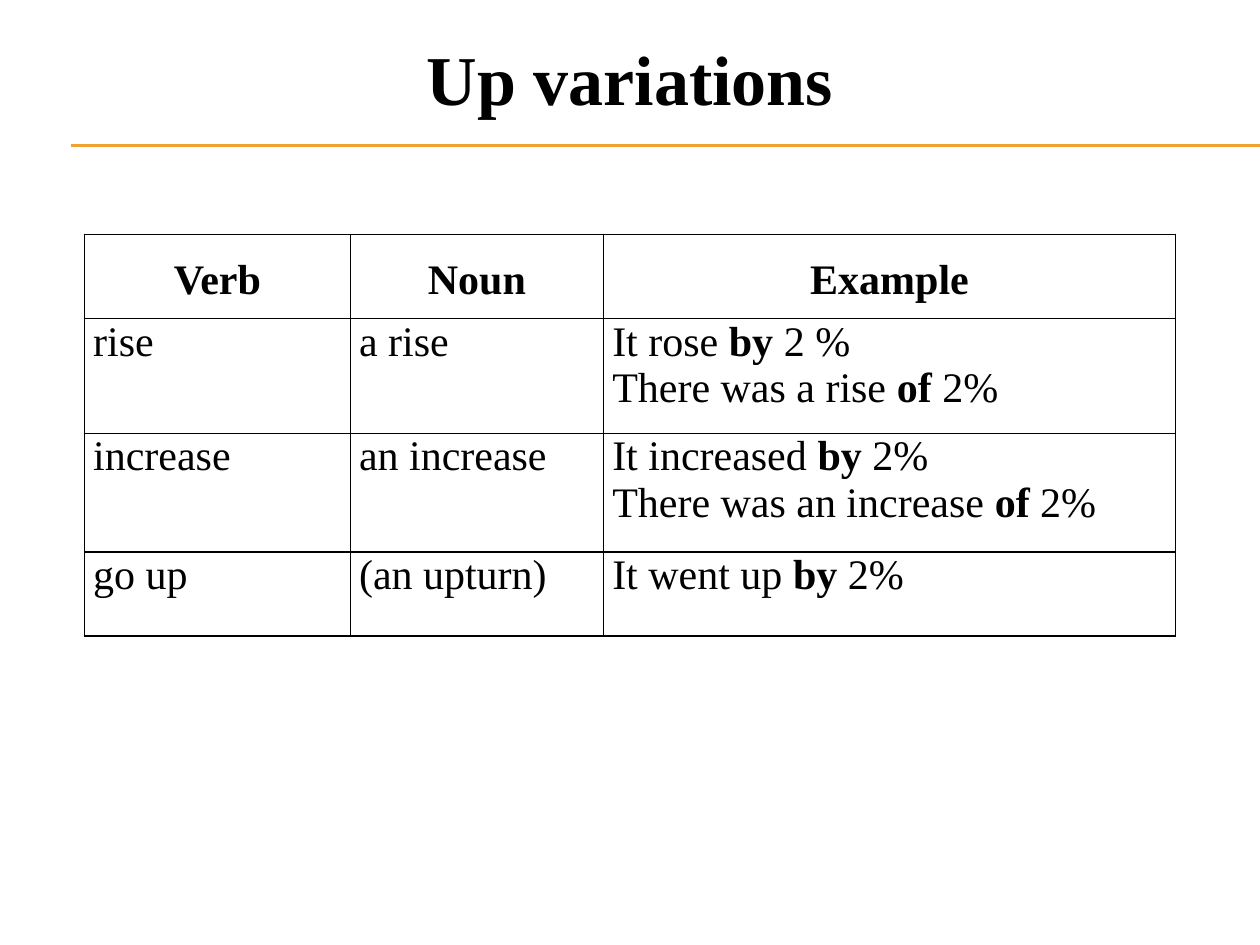
from lxml import etree
from pptx import Presentation
from pptx.dml.color import RGBColor
from pptx.enum.shapes import MSO_CONNECTOR
from pptx.enum.text import MSO_ANCHOR, PP_ALIGN
from pptx.oxml.ns import qn
from pptx.util import Pt

STRAIGHT = MSO_CONNECTOR.STRAIGHT
TOP, MIDDLE = MSO_ANCHOR.TOP, MSO_ANCHOR.MIDDLE
LEFT, CENTER = PP_ALIGN.LEFT, PP_ALIGN.CENTER
FONT = "Times New Roman"
BLACK, WHITE, AMBER = "000000", "FFFFFF", "F0A22E"
SLIDE_WIDTH, SLIDE_HEIGHT = 720, 540

COLUMN_SHARES = [2.11, 2.01, 4.54]
ROW_SHARES = [0.67, 0.91, 0.94, 0.67]
VARIATIONS = [
    ["Verb", "Noun", "Example"],
    ["rise", "a rise", "It rose *by *2 %\nThere was a rise *of* 2%"],
    ["increase", "an increase",
     "It increased *by* 2%\nThere was an increase *of* 2%"],
    ["go up", "(an upturn)", "It went up *by* 2%"],
]


def color(value):
    return RGBColor.from_string(value)


def style_paragraph(paragraph, size, align):
    paragraph.alignment = align
    paragraph.font.name = FONT
    paragraph.font.size = Pt(size)
    paragraph.font.color.rgb = color(BLACK)


def add_heading(slide, text, left, top, width, height):
    heading = slide.shapes.title
    heading.left, heading.top = Pt(left), Pt(top)
    heading.width, heading.height = Pt(width), Pt(height)
    frame = heading.text_frame
    frame.text = text
    frame.vertical_anchor = MIDDLE
    style_paragraph(frame.paragraphs[0], 40, CENTER)
    frame.paragraphs[0].font.bold = True


def add_double_rule(slide, left, top, width, gap):
    for y in (top, top + gap):
        rule = slide.shapes.add_connector(
            STRAIGHT, Pt(left), Pt(y), Pt(left + width), Pt(y))
        rule.line.color.rgb = color(AMBER)
        rule.line.width = Pt(0.75)
        etree.SubElement(rule._element.spPr, qn("a:effectLst"))


def add_borders(cell):
    properties = cell._tc.get_or_add_tcPr()
    for side in ("lnL", "lnR", "lnT", "lnB"):
        border = etree.SubElement(properties, qn(f"a:{side}"), w=str(Pt(1)))
        fill = etree.SubElement(border, qn("a:solidFill"))
        etree.SubElement(fill, qn("a:srgbClr"), val=BLACK)


def fill_cell(cell, text, is_header):
    add_borders(cell)
    cell.fill.solid()
    cell.fill.fore_color.rgb = color(WHITE)
    cell.margin_left = cell.margin_right = Pt(5.04)
    cell.margin_top = cell.margin_bottom = Pt(0)
    cell.vertical_anchor = MIDDLE if is_header else TOP
    frame = cell.text_frame
    for index, line in enumerate(text.split("\n")):
        paragraph = frame.add_paragraph() if index else frame.paragraphs[0]
        style_paragraph(paragraph, 24, CENTER if is_header else LEFT)
        if is_header:
            paragraph.line_spacing = 1.15
        for part, words in enumerate(line.split("*")):
            run = paragraph.add_run()
            run.text = words
            run.font.bold = is_header or part % 2 == 1


def add_variations_table(slide, left, top, width, height):
    table = slide.shapes.add_table(
        len(ROW_SHARES), len(COLUMN_SHARES),
        Pt(left), Pt(top), Pt(width), Pt(height)).table
    table.first_row = table.horz_banding = False
    for column, share in zip(table.columns, COLUMN_SHARES):
        column.width = Pt(width * share / sum(COLUMN_SHARES))
    for row, share in zip(table.rows, ROW_SHARES):
        row.height = Pt(height * share / sum(ROW_SHARES))
    for row_index, texts in enumerate(VARIATIONS):
        for column_index, text in enumerate(texts):
            fill_cell(table.cell(row_index, column_index), text, row_index == 0)


def main():
    presentation = Presentation()
    presentation.slide_width = Pt(SLIDE_WIDTH)
    presentation.slide_height = Pt(SLIDE_HEIGHT)
    slide = presentation.slides.add_slide(presentation.slide_layouts[5])
    add_double_rule(slide, 40.5, 82.8, SLIDE_WIDTH - 40.5, 0.6)
    add_variations_table(slide, 48.24, 133.92, 623.52, 229.68)
    add_heading(slide, "Up variations", 0, 16.5, SLIDE_WIDTH, 55.5)
    presentation.save("out.pptx")


if __name__ == "__main__":
    main()
